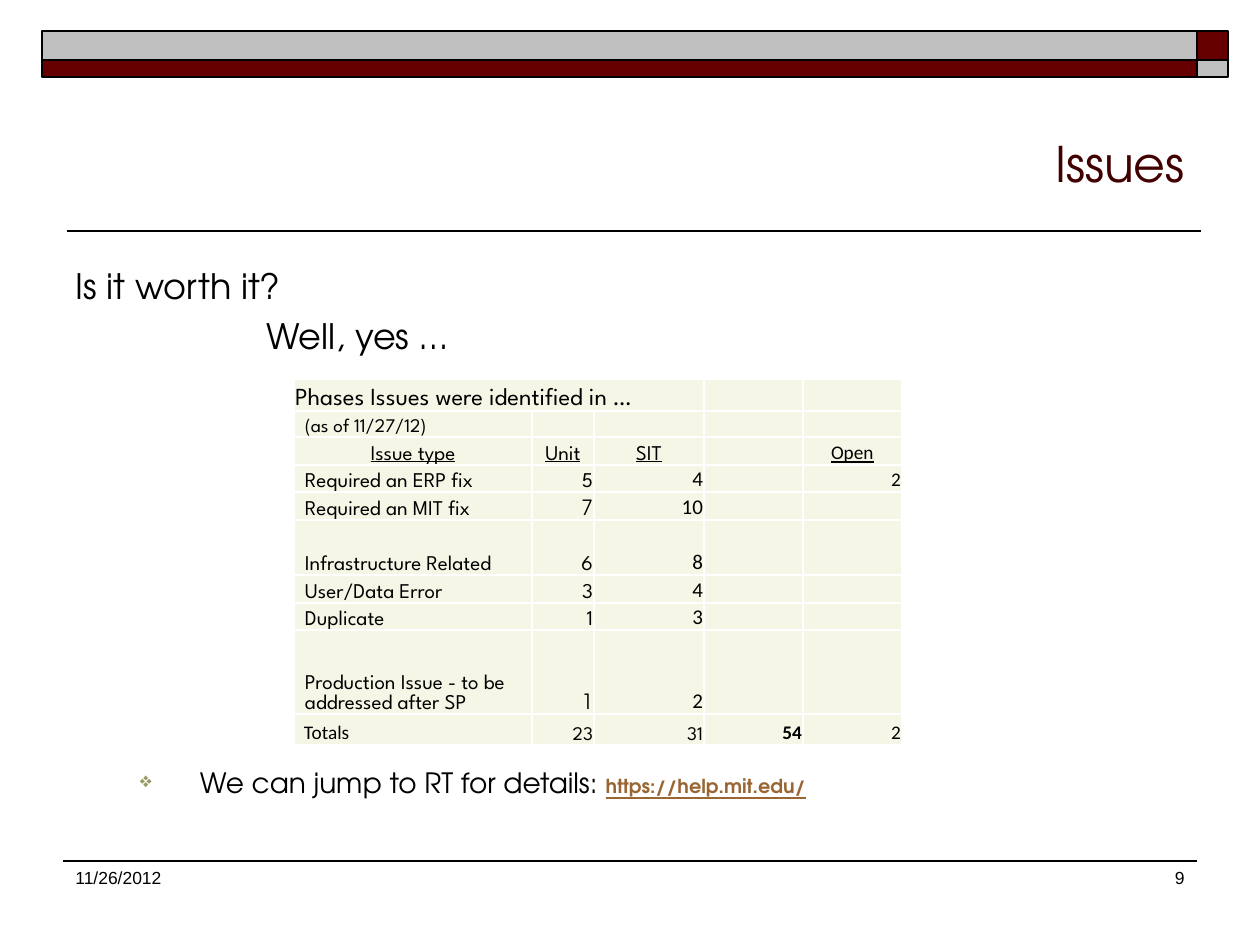
from lxml.etree import SubElement
from pptx import Presentation
from pptx.dml.color import RGBColor
from pptx.enum.shapes import MSO_CONNECTOR, MSO_SHAPE
from pptx.enum.text import MSO_ANCHOR, PP_ALIGN
from pptx.oxml.ns import qn
from pptx.util import Pt

EMU_PER_PX = 914400 / 126
HEADING, LABEL, NUMBER, FOOTER = "TeX Gyre Adventor", "League Spartan", "Calibri", "Arial"
BLACK, WHITE, MAROON, SILVER = "000000", "FFFFFF", "660000", "C0C0C0"
LEFT, CENTER, RIGHT = PP_ALIGN.LEFT, PP_ALIGN.CENTER, PP_ALIGN.RIGHT


def px(length):
    return round(length * EMU_PER_PX)


def rgb(color):
    return RGBColor.from_string(color)


def set_font(font, name, size, color=BLACK, bold=False, underline=False):
    font.name, font.size = name, Pt(size)
    font.bold, font.underline = bold, underline
    font.color.rgb = rgb(color)


class SlideBuilder:
    cell_fill = "F6F6E7"

    def __init__(self, slide):
        self.slide = slide

    def bar(self, x, y, width, height, color):
        bar = self.slide.shapes.add_shape(MSO_SHAPE.RECTANGLE, px(x), px(y), px(width), px(height))
        bar.shadow.inherit = False
        bar.fill.solid()
        bar.fill.fore_color.rgb = rgb(color)
        bar.line.color.rgb = rgb(BLACK)
        bar.line.width = Pt(1)

    def rule(self, x, y, width, weight):
        rule = self.slide.shapes.add_connector(
            MSO_CONNECTOR.STRAIGHT, px(x), px(y), px(x + width), px(y))
        rule.line.color.rgb = rgb(BLACK)
        rule.line.width = Pt(weight)
        SubElement(rule._element.spPr, qn("a:effectLst"))

    def frame(self, x, y, width, height, anchor=MSO_ANCHOR.TOP):
        frame = self.slide.shapes.add_textbox(px(x), px(y), px(width), px(height)).text_frame
        frame.word_wrap = True
        frame.vertical_anchor = anchor
        return frame

    def text(self, box, words, font, size, color=BLACK, align=LEFT, anchor=MSO_ANCHOR.TOP):
        paragraph = self.frame(*box, anchor).paragraphs[0]
        paragraph.text = words
        paragraph.alignment = align
        set_font(paragraph.font, font, size, color)

    def question(self, box, question, answer, answer_indent):
        frame = self.frame(*box)
        frame.text = f"{question}\n{answer}"
        for paragraph in frame.paragraphs:
            set_font(paragraph.font, HEADING, 20)
        reply = frame.paragraphs[1]
        reply.space_before = Pt(5)
        reply._p.get_or_add_pPr().set("marL", str(px(answer_indent)))

    def bullet(self, box, words, address, hanging):
        frame = self.frame(*box)
        frame.margin_left = frame.margin_top = 0
        paragraph = frame.paragraphs[0]
        properties = paragraph._p.get_or_add_pPr()
        properties.set("marL", str(px(hanging)))
        properties.set("indent", str(-px(hanging)))
        SubElement(SubElement(properties, qn("a:buClr")), qn("a:srgbClr"), val="999966")
        SubElement(properties, qn("a:buSzPct"), val="75000")
        SubElement(properties, qn("a:buChar"), char="❖")
        lead, link = paragraph.add_run(), paragraph.add_run()
        lead.text, link.text = words, address
        set_font(lead.font, HEADING, 16)
        set_font(link.font, HEADING, 11, "996633", bold=True, underline=True)

    def cell(self, cell, words="", font=NUMBER, size=11, align=RIGHT, indent=1,
             bold=False, underline=False):
        cell.margin_left, cell.margin_right = px(indent), px(1)
        cell.margin_top, cell.margin_bottom = px(1), 0
        cell.vertical_anchor = MSO_ANCHOR.BOTTOM
        paragraph = cell.text_frame.paragraphs[0]
        if words:
            paragraph.text = words
            paragraph.alignment = align
            set_font(paragraph.font, font, size, bold=bold, underline=underline)
        else:
            SubElement(paragraph._p, qn("a:endParaRPr"), sz=str(size * 100))
        # Borders come before the fill in the cell properties
        properties = cell._tc.get_or_add_tcPr()
        for side in ("lnL", "lnR", "lnT", "lnB"):
            border = SubElement(properties, qn(f"a:{side}"), w=str(Pt(1)))
            SubElement(SubElement(border, qn("a:solidFill")), qn("a:srgbClr"), val=WHITE)
        cell.fill.solid()
        cell.fill.fore_color.rgb = rgb(self.cell_fill)

    def table(self, x, y, widths, heights, rows):
        table = self.slide.shapes.add_table(
            len(heights), len(widths), px(x), px(y), px(sum(widths)), px(sum(heights))).table
        table.first_row = table.horz_banding = False
        for column, width in zip(table.columns, widths):
            column.width = px(width)
        for row, height in zip(table.rows, heights):
            row.height = px(height)
        table.cell(0, 0).merge(table.cell(0, 2))
        for r, styles in enumerate(rows):
            for c in range(len(widths)):
                self.cell(table.cell(r, c), **styles.get(c, {}))


def label(words, size=12, indent=11):
    return dict(words=words, font=LABEL, size=size, align=LEFT, indent=indent)


def header(words, font=LABEL, size=12):
    return dict(words=words, font=font, size=size, align=CENTER, underline=True)


def number(words, font=NUMBER, size=12, bold=False):
    return dict(words=words, font=font, size=size, bold=bold)


def issue_row(issue, unit, sit, unit_font=LABEL):
    return {0: label(issue), 1: number(unit, unit_font), 2: number(sit)}


def main():
    presentation = Presentation()
    presentation.slide_width, presentation.slide_height = px(1260), px(945)
    builder = SlideBuilder(presentation.slides.add_slide(presentation.slide_layouts[6]))

    # Header band and rules
    builder.rule(67, 231, 1134, 1)
    for y, height, long_color, end_color in ((31, 29, SILVER, MAROON), (60, 17, MAROON, SILVER)):
        builder.bar(42, y, 1155, height, long_color)
        builder.bar(1197, y, 31, height, end_color)
    builder.rule(63, 861, 1134, 0.75)

    # Footer
    builder.text((63, 861, 231, 63), "11/26/2012", FOOTER, 10)
    builder.text((935, 861, 262, 63), "9", FOOTER, 10, align=RIGHT)

    # Title and opening lines
    builder.text((63, 73, 1134, 126), "Issues", HEADING, 28, "420000", RIGHT, MSO_ANCHOR.BOTTOM)
    builder.question((63, 258, 1134, 110), "Is it worth it?", "Well, yes …", 191)

    # Issues by phase
    totals = {0: dict(words="Totals", align=LEFT, indent=10),
              1: number("23", LABEL, 11), 2: number("31", LABEL, 11),
              3: number("54", size=11, bold=True), 4: number("2", size=11)}
    issues = [
        {0: label("Phases Issues were identified in …", 14, 1)},
        {0: label("(as of 11/27/12)", 11)},
        {0: header("Issue type"), 1: header("Unit"), 2: header("SIT"),
         4: header("Open", NUMBER, 11)},
        issue_row("Required an ERP fix", "5", "4") | {4: number("2", size=11)},
        issue_row("Required an MIT fix", "7", "10", HEADING),
        issue_row("Infrastructure Related", "6", "8"),
        issue_row("User/Data Error", "3", "4"),
        issue_row("Duplicate", "1", "3"),
        issue_row("Production Issue - to be addressed after SP", "1", "2", HEADING),
        totals,
    ]
    builder.table(294, 379, (238, 62, 110, 99, 99),
                  (32, 26, 28, 27, 28, 55, 28, 27, 84, 31), issues)

    # Pointer to the details
    builder.bullet((140, 766, 1057, 45), "We can jump to RT for details: ",
                   "https://help.mit.edu/", 60)

    presentation.save("out.pptx")


if __name__ == "__main__":
    main()
